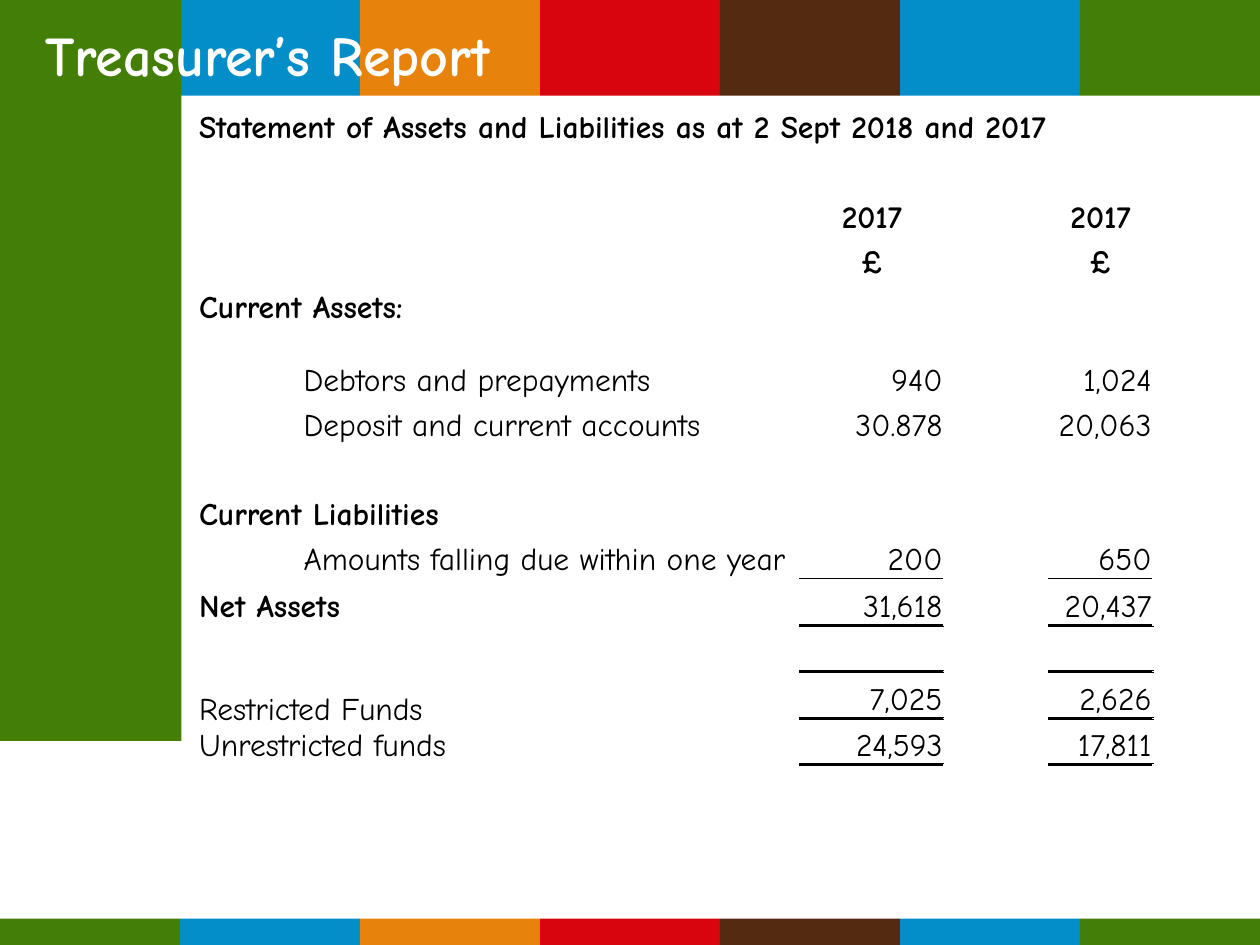
from dataclasses import dataclass

from lxml import etree
from pptx import Presentation
from pptx.dml.color import RGBColor
from pptx.enum.shapes import MSO_SHAPE
from pptx.enum.text import MSO_ANCHOR, PP_ALIGN
from pptx.oxml.ns import qn
from pptx.util import Inches, Pt

RECT = MSO_SHAPE.RECTANGLE
MIDDLE, BOTTOM = MSO_ANCHOR.MIDDLE, MSO_ANCHOR.BOTTOM
LEFT, CENTER, RIGHT = PP_ALIGN.LEFT, PP_ALIGN.CENTER, PP_ALIGN.RIGHT
FONT = "Comic Neue"
GREEN, BLUE, ORANGE, RED, BROWN = "437E06", "038EC9", "E7830B", "D8050E", "542A10"
BANDS = [GREEN, BLUE, ORANGE, RED, BROWN, BLUE, GREEN]
COLS = [0.83, 3.95, 1.14, 0.83, 0.83, 0.83]
ROWS = [25.6] * 5 + [42] + [25.6] * 4 + [26.6] * 5
YEARS = (2, 4)
THIN, THICK = 0.5, 2


@dataclass
class Entry:
    row: int
    col: int
    text: str
    bold: bool = False
    wide: int = 1
    tall: int = 1


@dataclass
class Pair:
    row: int
    now: str
    past: str
    head: bool = False


LABELS = [
    Entry(0, 0, "Statement of Assets and Liabilities as at 2 Sept 2018 and 2017", True, 6),
    Entry(4, 0, "Current Assets:", True, 2),
    Entry(5, 1, "Debtors and prepayments"),
    Entry(6, 1, "Deposit and current accounts"),
    Entry(8, 0, "Current Liabilities", True, 2),
    Entry(9, 1, "Amounts falling due within one year"),
    Entry(10, 0, "Net Assets", True, 2),
    Entry(12, 0, "Restricted Funds\nUnrestricted funds", False, 2, 2),
]
PAIRS = [
    Pair(2, "2017", "2017", True),
    Pair(3, "£", "£", True),
    Pair(5, "940", "1,024"),
    Pair(6, "30.878", "20,063"),
    Pair(9, "200", "650"),
    Pair(10, "31,618", "20,437"),
    Pair(12, "7,025", "2,626"),
    Pair(13, "24,593", "17,811"),
]
RULES = {9: THIN, 10: THICK, 11: THICK, 12: THICK, 13: THICK}


def hue(code: str) -> RGBColor:
    return RGBColor.from_string(code)


def style(frame, size: int, code: str, bold: bool, align=LEFT) -> None:
    for para in frame.paragraphs:
        para.alignment = align
        for run in para.runs:
            run.font.name = FONT
            run.font.size = Pt(size)
            run.font.bold = bold
            run.font.color.rgb = hue(code)


def block(slide, x: float, y: float, wide: float, high: float, code: str) -> None:
    shape = slide.shapes.add_shape(RECT, Inches(x), Inches(y), Inches(wide), Inches(high))
    shape.shadow.inherit = False
    shape.fill.solid()
    shape.fill.fore_color.rgb = hue(code)
    shape.line.fill.background()


def strip(slide, y: float, high: float) -> None:
    step = 10 / len(BANDS)
    for i, code in enumerate(BANDS):
        block(slide, i * step, y, step, high, code)


def rule(cell, side: str, width: float) -> None:
    line = etree.SubElement(cell._tc.get_or_add_tcPr(), qn(f"a:ln{side}"), w=str(Pt(width)))
    fill = etree.SubElement(line, qn("a:solidFill"))
    etree.SubElement(fill, qn("a:srgbClr"), val="000000")


def write(cell, text: str, bold: bool, align=LEFT) -> None:
    cell.text_frame.text = text
    style(cell.text_frame, 18, "000000", bold, align)


def fill_table(slide) -> None:
    frame = slide.shapes.add_table(
        len(ROWS), len(COLS), Inches(1.57), Inches(0.81), Inches(sum(COLS)), Pt(sum(ROWS))
    )
    table = frame.table
    table.first_row = table.horz_banding = False
    for col, wide in zip(table.columns, COLS):
        col.width = Inches(wide)
    for row, high in zip(table.rows, ROWS):
        row.height = Pt(high)
    for i in range(len(ROWS)):
        for j in range(len(COLS)):
            cell = table.cell(i, j)
            cell.margin_left = cell.margin_right = cell.margin_top = Inches(0.01)
            cell.margin_bottom = 0
            cell.vertical_anchor = BOTTOM
            if j in YEARS:
                if i - 1 in RULES:
                    rule(cell, "T", RULES[i - 1])
                if i in RULES:
                    rule(cell, "B", RULES[i])
            cell.fill.background()
    for item in LABELS:
        cell = table.cell(item.row, item.col)
        if item.wide > 1:
            cell.merge(table.cell(item.row + item.tall - 1, item.col + item.wide - 1))
        write(cell, item.text, item.bold)
    for pair in PAIRS:
        for col, text in zip(YEARS, (pair.now, pair.past)):
            write(table.cell(pair.row, col), text, pair.head, CENTER if pair.head else RIGHT)


def set_title(slide) -> None:
    title = slide.shapes.title
    title.left, title.top = Inches(0.26), Inches(0.05)
    title.width, title.height = Inches(9.49), Inches(0.76)
    title.text_frame.text = "Treasurer’s Report"
    title.text_frame.vertical_anchor = MIDDLE
    style(title.text_frame, 32, "FFFFFF", True)
    slide.shapes._spTree.append(title._element)


def main() -> None:
    deck = Presentation()
    deck.slide_width, deck.slide_height = Inches(10), Inches(7.5)
    slide = deck.slides.add_slide(deck.slide_layouts[5])
    strip(slide, 0, 0.76)
    block(slide, 0, 0, 1.44, 5.88, GREEN)
    strip(slide, 7.29, 0.21)
    set_title(slide)
    fill_table(slide)
    deck.save("out.pptx")


if __name__ == "__main__":
    main()
